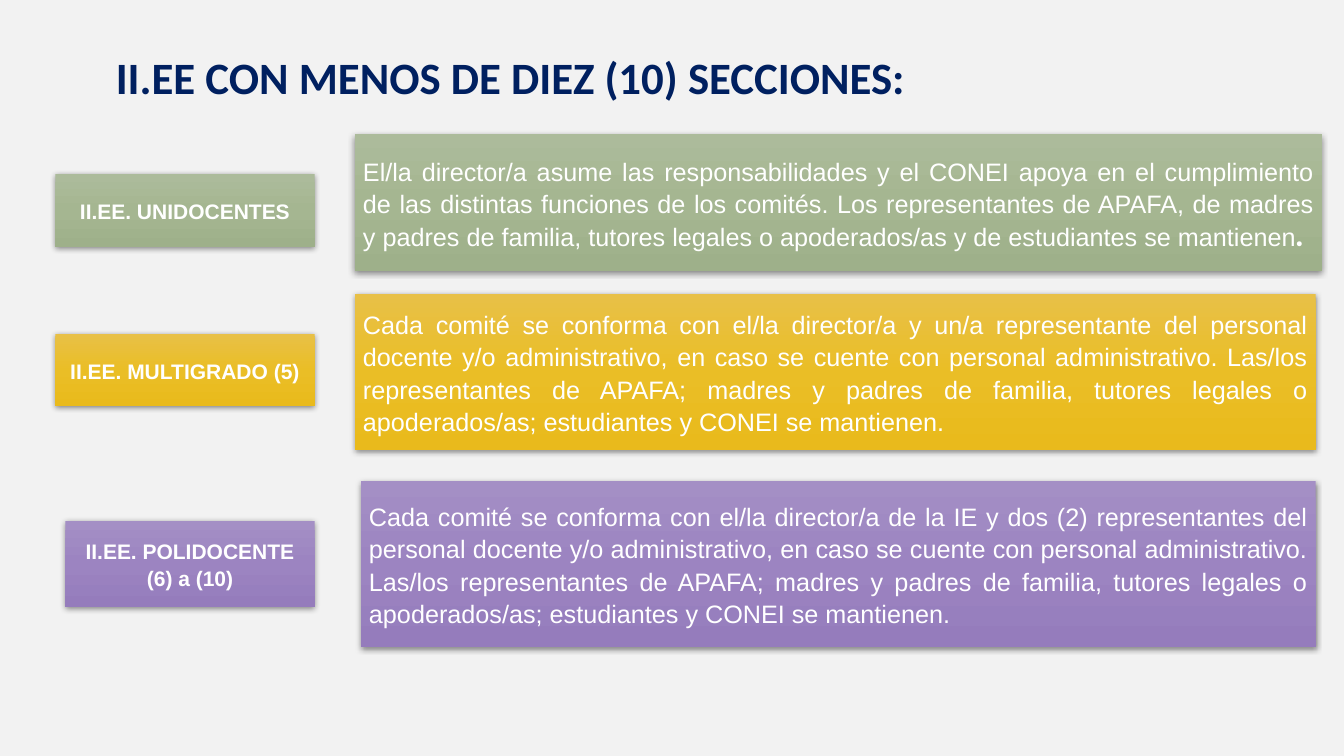
from dataclasses import dataclass

from lxml.etree import SubElement
from pptx import Presentation
from pptx.dml.color import RGBColor
from pptx.enum.shapes import MSO_SHAPE
from pptx.enum.text import MSO_ANCHOR, PP_ALIGN
from pptx.oxml.ns import qn
from pptx.util import Inches, Pt


@dataclass(frozen=True)
class Theme:
    """Colours, fonts and type sizes of the slide."""

    background: str = "F2F2F2"
    heading: str = "002060"
    light: str = "FFFFFF"
    shadow: str = "000000"
    green: tuple = ("ACBB9B", "A5B691", "9EB08A")
    yellow: tuple = ("E8C047", "EABE26", "E9BA1C")
    purple: tuple = ("A48FC5", "9C84C1", "957CBC")
    heading_font: str = "Calibri"
    body_font: str = "Arial"
    accent_font: str = "Montserrat"
    heading_size: int = 32
    label_size: int = 15
    body_size: int = 18


THEME = Theme()

LEVELS = [
    (THEME.green, "II.EE. UNIDOCENTES", (0.55, 1.73, 2.57, 0.72),
     "El/la director/a asume las responsabilidades y el CONEI apoya en el cumplimiento "
     "de las distintas funciones de los comités. Los representantes de APAFA, de madres "
     "y padres de familia, tutores legales o apoderados/as y de estudiantes se mantienen",
     (3.52, 1.33, 9.59, 1.36), "."),
    (THEME.yellow, "II.EE. MULTIGRADO (5)", (0.55, 3.31, 2.57, 0.72),
     "Cada comité se conforma con el/la director/a y un/a representante del personal "
     "docente y/o administrativo, en caso se cuente con personal administrativo. Las/los "
     "representantes de APAFA; madres y padres de familia, tutores legales o "
     "apoderados/as; estudiantes y CONEI se mantienen.",
     (3.52, 2.92, 9.53, 1.54), ""),
    (THEME.purple, "II.EE. POLIDOCENTE (6) a (10)", (0.65, 5.17, 2.47, 0.85),
     "Cada comité se conforma con el/la director/a de la IE y dos (2) representantes del "
     "personal docente y/o administrativo, en caso se cuente con personal administrativo. "
     "Las/los representantes de APAFA; madres y padres de familia, tutores legales o "
     "apoderados/as; estudiantes y CONEI se mantienen.",
     (3.58, 4.77, 9.47, 1.65), ""),
]


def set_font(font, name, size, color, bold=False):
    """Apply typeface, size, colour and weight."""
    font.name = name
    font.size = Pt(size)
    font.bold = bold
    font.color.rgb = RGBColor.from_string(color)


def shade(card, colors):
    """Fill a card with an evenly spaced gradient from top to bottom."""
    card.fill.gradient()
    card.fill.gradient_angle = 270
    stops = card._element.spPr.find(f".//{qn('a:gsLst')}")
    stops.clear()
    for index, color in enumerate(colors):
        position = index * 100000 // (len(colors) - 1)
        stop = SubElement(stops, qn("a:gs"), pos=str(position))
        SubElement(stop, qn("a:srgbClr"), val=color)


def cast_shadow(card):
    """Give a card a soft shadow that falls straight down."""
    card.shadow.inherit = False
    effects = card._element.spPr.find(qn("a:effectLst"))
    outer = SubElement(effects, qn("a:outerShdw"), blurRad=str(Pt(4.4)),
                       dist=str(Pt(1.2)), dir="5400000", rotWithShape="0")
    color = SubElement(outer, qn("a:srgbClr"), val=THEME.shadow)
    SubElement(color, qn("a:alpha"), val="45000")


def add_card(slide, box, colors, text, size, alignment, bold=False):
    """Add a shaded card and return its paragraph."""
    card = slide.shapes.add_shape(MSO_SHAPE.RECTANGLE, *map(Inches, box))
    shade(card, colors)
    card.line.fill.background()
    cast_shadow(card)
    frame = card.text_frame
    frame.word_wrap = True
    frame.vertical_anchor = MSO_ANCHOR.MIDDLE
    frame.margin_left = frame.margin_right = Inches(0.08)
    frame.margin_top = frame.margin_bottom = Inches(0.04)
    paragraph = frame.paragraphs[0]
    paragraph.alignment = alignment
    paragraph.line_spacing = 1.07
    paragraph.add_run().text = text
    set_font(paragraph.font, THEME.body_font, size, THEME.light, bold)
    return paragraph


def add_heading(slide, text):
    """Add the slide heading."""
    heading = slide.shapes.add_textbox(*map(Inches, (1.05, 0.44, 10.33, 1.04)))
    heading.text_frame.word_wrap = True
    paragraph = heading.text_frame.paragraphs[0]
    paragraph.text = text
    set_font(paragraph.font, THEME.heading_font, THEME.heading_size, THEME.heading, True)


def add_level(slide, colors, label, label_box, duties, duties_box, ending):
    """Add a school type with its label and the duties beside it."""
    add_card(slide, label_box, colors, label, THEME.label_size, PP_ALIGN.CENTER, True)
    paragraph = add_card(slide, duties_box, colors, duties, THEME.body_size, PP_ALIGN.JUSTIFY)
    if ending:
        full_stop = paragraph.add_run()
        full_stop.text = ending
        full_stop.font.name = THEME.accent_font
        full_stop.font.bold = True


def main():
    """Build and save the slide."""
    deck = Presentation()
    deck.slide_width, deck.slide_height = Inches(13.33), Inches(7.5)
    slide = deck.slides.add_slide(deck.slide_layouts[6])
    slide.background.fill.solid()
    slide.background.fill.fore_color.rgb = RGBColor.from_string(THEME.background)
    add_heading(slide, "II.EE CON MENOS DE DIEZ (10) SECCIONES:")
    for level in LEVELS:
        add_level(slide, *level)
    deck.save("out.pptx")


if __name__ == "__main__":
    main()
